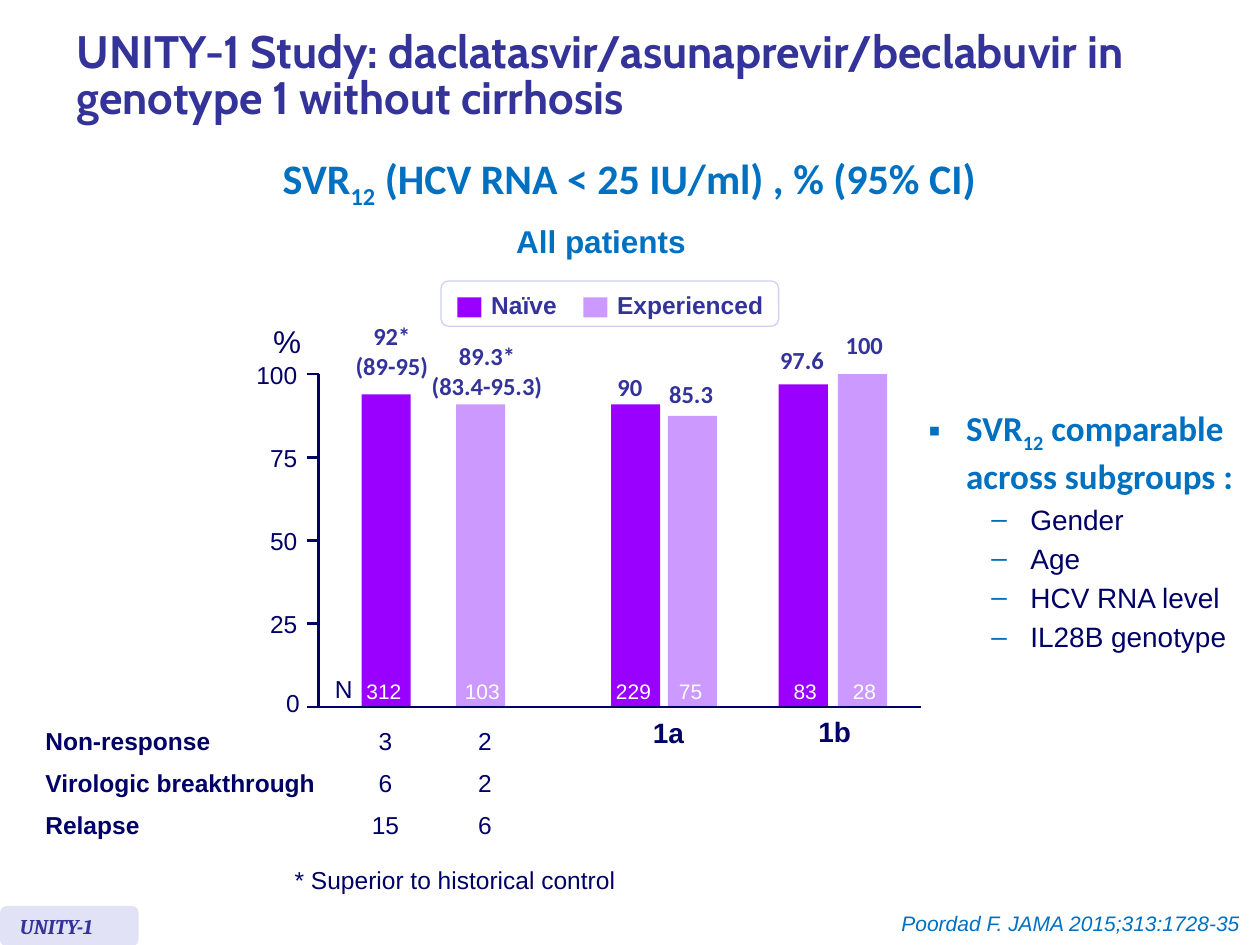
import pptx
import pptx.util
import pptx.dml.color
import pptx.enum.shapes
import pptx.enum.text
import pptx.oxml.ns
from lxml import etree

Inches, Pt = pptx.util.Inches, pptx.util.Pt
RGBColor = pptx.dml.color.RGBColor
SHAPE = pptx.enum.shapes.MSO_SHAPE
ALIGN = pptx.enum.text.PP_ALIGN
MIDDLE = pptx.enum.text.MSO_ANCHOR.MIDDLE
FIT_TEXT = pptx.enum.text.MSO_AUTO_SIZE.SHAPE_TO_FIT_TEXT
qn = pptx.oxml.ns.qn

NAVY = RGBColor(0x00, 0x00, 0x66)
INDIGO = RGBColor(0x33, 0x33, 0x99)
BLUE = RGBColor(0x00, 0x70, 0xC0)
NAIVE = RGBColor(0x99, 0x00, 0xFF)
EXPERIENCED = RGBColor(0xCC, 0x99, 0xFF)
TAG_FILL = RGBColor(0xE2, 0xE2, 0xF6)
LEGEND_LINE = RGBColor(0xD0, 0xD0, 0xF0)
WHITE = RGBColor(0xFF, 0xFF, 0xFF)

TITLE = "UNITY-1 Study: daclatasvir/asunaprevir/beclabuvir in genotype 1 without cirrhosis"
# A run is text, or (text, baseline shift in thousandths of a percent)
SUBSCRIPT = -25000
HEADING = ["SVR", ("12", SUBSCRIPT), " (HCV RNA < 25 IU/ml) , % (95% CI)"]
FINDING = ["SVR", ("12", SUBSCRIPT), " comparable across subgroups :"]
SUBGROUPS = ["Gender", "Age", "HCV RNA level", "IL28B genotype"]

# bar left, bar top, colour, label lines, label box, patients, patients left
BARS = [
    (2.87, 3.13, NAIVE, ["92*", "(89-95)"], (2.72, 2.45, 0.78, 0.67), "312", 2.81),
    (3.62, 3.21, EXPERIENCED, ["89.3*", "(83.4-95.3)"], (3.32, 2.61, 1.09, 0.67), "103", 3.59),
    (4.85, 3.21, NAIVE, ["90"], (4.8, 2.85, 0.4, 0.44), "229", 4.79),
    (5.3, 3.3, EXPERIENCED, ["85.3"], (5.21, 2.91, 0.55, 0.44), "75", 5.29),
    (6.18, 3.05, NAIVE, ["97.6"], (6.09, 2.64, 0.55, 0.44), "83", 6.2),
    (6.65, 2.97, EXPERIENCED, ["100"], (6.61, 2.52, 0.5, 0.44), "28", 6.67),
]
BAR_WIDTH = 0.39
GENOTYPES = [("1a", 5.06, 5.63), ("1b", 6.38, 5.62)]
LEGEND = [("Naïve", NAIVE, 3.63, 0.72), ("Experienced", EXPERIENCED, 4.63, 1.37)]

AXIS_X, AXIS_TOP, BASELINE = 2.53, 2.97, 5.61
TICKS = [0, 25, 50, 75, 100]

FAILURES = [
    ("Non-response", "3", "2"),
    ("Virologic breakthrough", "6", "2"),
    ("Relapse", "15", "6"),
]
FAILURE_COLUMNS = [2.38, 0.84, 0.74]
FAILURE_ROW = 0.33

prs = pptx.Presentation()
prs.slide_width, prs.slide_height = Inches(10), Inches(7.5)
slide = prs.slides.add_slide(prs.slide_layouts[6])


def add_runs(paragraph, runs, size, color, font="Arial", bold=False, italic=False):
    for item in runs:
        words, shift = item if isinstance(item, tuple) else (item, 0)
        run = paragraph.add_run()
        run.text = words
        run.font.name, run.font.size = font, Pt(size)
        run.font.bold, run.font.italic = bold, italic
        run.font.color.rgb = color
        if shift:
            run.font._element.set("baseline", str(shift))


def add_text(box, lines, size, color, align=ALIGN.LEFT, wrap=False, margins=None,
             anchor=None, spacing=None, **style):
    """Add a text box; each line is a list of runs or a plain string."""
    frame = slide.shapes.add_textbox(*map(Inches, box)).text_frame
    frame.word_wrap = wrap
    if not wrap:
        frame.auto_size = FIT_TEXT
    if margins is not None:
        frame.margin_left = frame.margin_right = Inches(margins)
        frame.margin_top = frame.margin_bottom = Inches(margins)
    if anchor is not None:
        frame.vertical_anchor = anchor
    for i, line in enumerate(lines):
        paragraph = frame.paragraphs[0] if i == 0 else frame.add_paragraph()
        paragraph.alignment = align
        if spacing is not None:
            paragraph.line_spacing = spacing
        add_runs(paragraph, [line] if isinstance(line, str) else line, size, color, **style)
    return frame


def add_block(box, fill, kind=SHAPE.RECTANGLE, outline=None):
    block = slide.shapes.add_shape(kind, *map(Inches, box))
    block.shadow.inherit = False
    block.fill.solid()
    block.fill.fore_color.rgb = fill
    if outline is None:
        block.line.fill.background()
    else:
        block.line.color.rgb, block.line.width = outline, Pt(0.75)


def add_axis_line(x1, y1, x2, y2):
    line = slide.shapes.add_connector(
        pptx.enum.shapes.MSO_CONNECTOR.STRAIGHT, *map(Inches, (x1, y1, x2, y2)))
    line.line.color.rgb, line.line.width = NAVY, Pt(1.5)
    etree.SubElement(line._element.spPr, qn("a:effectLst"))


def set_bullet(paragraph, mark, left, hanging):
    props = paragraph._p.get_or_add_pPr()
    props.set("marL", str(Inches(left)))
    props.set("indent", str(-Inches(hanging)))
    color = etree.SubElement(props, qn("a:buClr"))
    etree.SubElement(color, qn("a:srgbClr")).set("val", str(BLUE))
    etree.SubElement(props, qn("a:buFont")).set("typeface", "Arial")
    etree.SubElement(props, qn("a:buChar")).set("char", mark)


# Headings
add_text((0.51, 0.08, 9.13, 1.07), [TITLE], 26, INDIGO, wrap=True, anchor=MIDDLE,
         spacing=0.85, font="Cabin", bold=True)
add_text((2.1, 1.29, 5.79, 0.44), [HEADING], 24, BLUE, ALIGN.CENTER,
         spacing=Pt(23.6), font="Calibri", bold=True)
add_text((3.99, 1.71, 1.56, 0.4), ["All patients"], 18, BLUE, ALIGN.CENTER, bold=True)

# Legend
add_block((3.5, 2.23, 2.68, 0.36), WHITE, SHAPE.ROUNDED_RECTANGLE, LEGEND_LINE)
for group, color, left, width in LEGEND:
    add_block((left, 2.36, 0.19, 0.16), color)
    add_text((left + 0.17, 2.25, width, 0.34), [group], 14, INDIGO, bold=True)

# Bars, drawn before the axes that they stand on
for left, top, color, label, label_box, patients, patients_left in BARS:
    add_block((left, top, BAR_WIDTH, BASELINE - top), color)
    add_text(label_box, label, 14, INDIGO, ALIGN.CENTER, margins=0.1,
             font="Calibri", bold=True)
    add_text((patients_left, 5.34, 0.22 + 0.09 * len(patients), 0.3), [patients], 12, WHITE)
for genotype, left, top in GENOTYPES:
    add_text((left, top, 0.49, 0.37), [genotype], 16, NAVY, ALIGN.CENTER, bold=True)

# Axes
for tick in TICKS:
    y = BASELINE - tick / 100 * (BASELINE - AXIS_TOP)
    if tick:
        add_axis_line(AXIS_X - 0.09, y, AXIS_X, y)
    label_y = y if tick else y - 0.03
    label_right = 2.36 if tick else 2.38
    width = 0.11 * len(str(tick))
    add_text((label_right - width, label_y - 0.12, width, 0.24), [str(tick)], 14, NAVY,
             ALIGN.RIGHT, margins=0, anchor=MIDDLE)
add_axis_line(AXIS_X, AXIS_TOP, AXIS_X, BASELINE)
add_axis_line(AXIS_X - 0.09, BASELINE, 7.31, BASELINE)
add_text((2.07, 2.51, 0.43, 0.4), ["%"], 18, NAVY)
add_text((2.56, 5.3, 0.34, 0.34), ["N"], 14, NAVY)

# Treatment failures
failures = slide.shapes.add_table(
    len(FAILURES), len(FAILURE_COLUMNS), Inches(0.26), Inches(5.72),
    Inches(sum(FAILURE_COLUMNS)), Inches(FAILURE_ROW * len(FAILURES))).table
failures.first_row = failures.horz_banding = False
failures._tbl.tblPr.find(qn("a:tableStyleId")).text = "{2D5ABB26-0587-4C30-8999-92F81FD0307C}"
for column, width in zip(failures.columns, FAILURE_COLUMNS):
    column.width = Inches(width)
for r, row in enumerate(FAILURES):
    failures.rows[r].height = Inches(FAILURE_ROW)
    for c, value in enumerate(row):
        cell = failures.cell(r, c)
        cell.fill.background()
        cell.vertical_anchor = MIDDLE
        paragraph = cell.text_frame.paragraphs[0]
        paragraph.alignment = ALIGN.CENTER if c else ALIGN.LEFT
        add_runs(paragraph, [value], 14, NAVY, bold=c == 0)

# Subgroup finding
finding = add_text((7.27, 3.18, 2.68, 2.32), [FINDING], 20, BLUE, wrap=True,
                   font="Calibri", bold=True)
set_bullet(finding.paragraphs[0], "▪", 0.3, 0.3)
for subgroup in SUBGROUPS:
    paragraph = finding.add_paragraph()
    paragraph.level = 1
    paragraph.space_before = Pt(3.2)
    set_bullet(paragraph, "–", 0.81, 0.31)
    add_runs(paragraph, [subgroup], 16, NAVY)

# Footer
add_text((2.24, 6.82, 2.76, 0.34), ["* Superior to historical control"], 14, NAVY)
add_block((0, 7.19, 1.1, 0.32), TAG_FILL, SHAPE.ROUNDED_RECTANGLE)
add_text((0.06, 7.2, 1.35, 0.3), ["UNITY-1"], 12, INDIGO, wrap=True,
         font="Cambria", bold=True, italic=True)
add_text((5.48, 7.18, 4.46, 0.3), ["Poordad F. JAMA 2015;313:1728-35"], 12, BLUE,
         ALIGN.RIGHT, wrap=True, italic=True)

prs.save("out.pptx")
